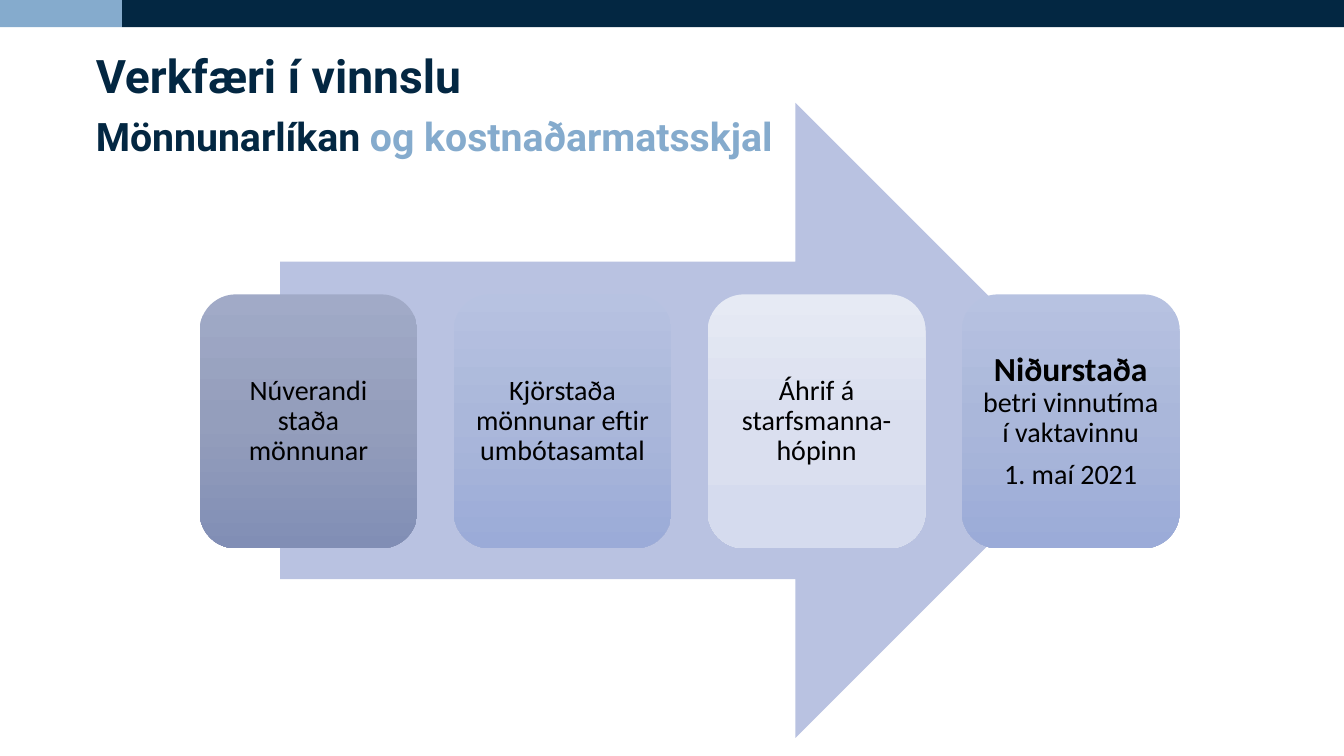
"""Builds the slide on staffing tools, with four cards along an arrow."""
import copy
from dataclasses import dataclass

import pptx
import pptx.dml.color
import pptx.enum.shapes
import pptx.enum.text
import pptx.oxml.ns
import pptx.util

Inches = pptx.util.Inches
Pt = pptx.util.Pt
Shape = pptx.enum.shapes.MSO_SHAPE
Anchor = pptx.enum.text.MSO_ANCHOR
Align = pptx.enum.text.PP_ALIGN

COLOURS = {
    "navy": "032742",
    "sky": "85ABCD",
    "arrow": "B9C2E1",
    "text": "000000",
}
GRADIENTS = {
    "slate": ("A1AAC7", "949EBC", "818EB5"),
    "blue": ("B7C2E1", "AAB7DA", "9BABD8"),
    "pale": ("E6EAF4", "DADFEF", "D5DBEE"),
}
CARD_LEFT, CARD_TOP, CARD_WIDTH, CARD_HEIGHT, CARD_STEP = 1.98, 2.92, 2.16, 2.52, 2.52


@dataclass
class Span:
    """A piece of text with one format."""
    text: str
    size: float = 20
    bold: bool = False
    colour: str = "text"
    font: str = "Calibri"


@dataclass
class Card:
    """A rounded card with its gradient and paragraphs."""
    gradient: str
    paragraphs: list[list[Span]]
    inset: float = 0.08


TITLE = [
    [Span("Verkfæri í vinnslu", 33, True, "navy", "Roboto")],
    [
        Span("Mönnunarlíkan ", 28, True, "navy", "Roboto"),
        Span("og kostnaðarmatsskjal", 28, True, "sky", "Roboto"),
    ],
]
CARDS = [
    Card("slate", [[Span("Núverandi staða mönnunar")]]),
    Card("blue", [[Span("Kjörstaða mönnunar eftir umbótasamtal")]]),
    Card("pale", [[Span("Áhrif á starfsmanna-hópinn")]]),
    Card(
        "blue",
        [
            [Span("Niðurstaða ", 24, True), Span("betri vinnutíma í vaktavinnu")],
            [Span("1. maí 2021")],
        ],
        0.1,
    ),
]


def rgb(value: str) -> pptx.dml.color.RGBColor:
    """Turns a hex string into a colour."""
    return pptx.dml.color.RGBColor.from_string(value)


def write(frame, paragraphs: list[list[Span]], align, gap: float) -> None:
    """Fills a text frame with formatted paragraphs."""
    frame.word_wrap = True
    for index, spans in enumerate(paragraphs):
        para = frame.add_paragraph() if index else frame.paragraphs[0]
        para.alignment = align
        para.line_spacing = 0.9
        para.space_before = Pt(gap if index else 0)
        for span in spans:
            run = para.add_run()
            run.text = span.text
            run.font.name = span.font
            run.font.size = Pt(span.size)
            run.font.bold = span.bold
            run.font.color.rgb = rgb(COLOURS[span.colour])


def add_box(page, kind, left: float, top: float, width: float, height: float):
    """Adds a shape without outline or shadow."""
    box = page.shapes.add_shape(kind, Inches(left), Inches(top), Inches(width), Inches(height))
    box.shadow.inherit = False
    box.line.fill.background()
    return box


def add_solid(page, kind, left: float, top: float, width: float, height: float, colour: str) -> None:
    """Adds a shape in one plain colour."""
    box = add_box(page, kind, left, top, width, height)
    box.fill.solid()
    box.fill.fore_color.rgb = rgb(COLOURS[colour])


def fill_gradient(box, colours: tuple[str, ...]) -> None:
    """Fills a shape from top to bottom through evenly spaced colours."""
    box.fill.gradient()
    box.fill.gradient_angle = 270
    stop_list = box.element.spPr.find(".//" + pptx.oxml.ns.qn("a:gsLst"))
    while len(stop_list) < len(colours):
        stop_list.append(copy.deepcopy(stop_list[0]))
    for index, (stop, colour) in enumerate(zip(box.fill.gradient_stops, colours)):
        stop.position = index / (len(colours) - 1)
        stop.color.rgb = rgb(colour)


def add_card(page, card: Card, left: float) -> None:
    """Adds one card with its centred text."""
    box = add_box(page, Shape.ROUNDED_RECTANGLE, left, CARD_TOP, CARD_WIDTH, CARD_HEIGHT)
    fill_gradient(box, GRADIENTS[card.gradient])
    frame = box.text_frame
    frame.vertical_anchor = Anchor.MIDDLE
    frame.margin_left = frame.margin_right = Inches(card.inset)
    frame.margin_top = frame.margin_bottom = Inches(card.inset)
    write(frame, card.paragraphs, Align.CENTER, 8)


def add_title(page) -> None:
    """Places the two-line heading in the title placeholder."""
    title = page.shapes.title
    title.left, title.top = Inches(0.85), Inches(0.48)
    title.width, title.height = Inches(7.37), Inches(1.1)
    title.text_frame.auto_size = pptx.enum.text.MSO_AUTO_SIZE.NONE
    title.text_frame.vertical_anchor = Anchor.TOP
    write(title.text_frame, TITLE, Align.LEFT, 10)


def main() -> None:
    """Builds and saves the deck."""
    deck = pptx.Presentation()
    deck.slide_width, deck.slide_height = Inches(13.33), Inches(7.5)
    page = deck.slides.add_slide(deck.slide_layouts.get_by_name("Title Only"))
    add_title(page)
    add_solid(page, Shape.RECTANGLE, 1.21, 0, 12.12, 0.27, "navy")
    add_solid(page, Shape.RECTANGLE, 0, 0, 1.21, 0.27, "sky")
    add_solid(page, Shape.RIGHT_ARROW, 2.78, 1.02, 8.26, 6.3, "arrow")
    for index, card in enumerate(CARDS):
        add_card(page, card, CARD_LEFT + index * CARD_STEP)
    deck.save("out.pptx")


if __name__ == "__main__":
    main()
